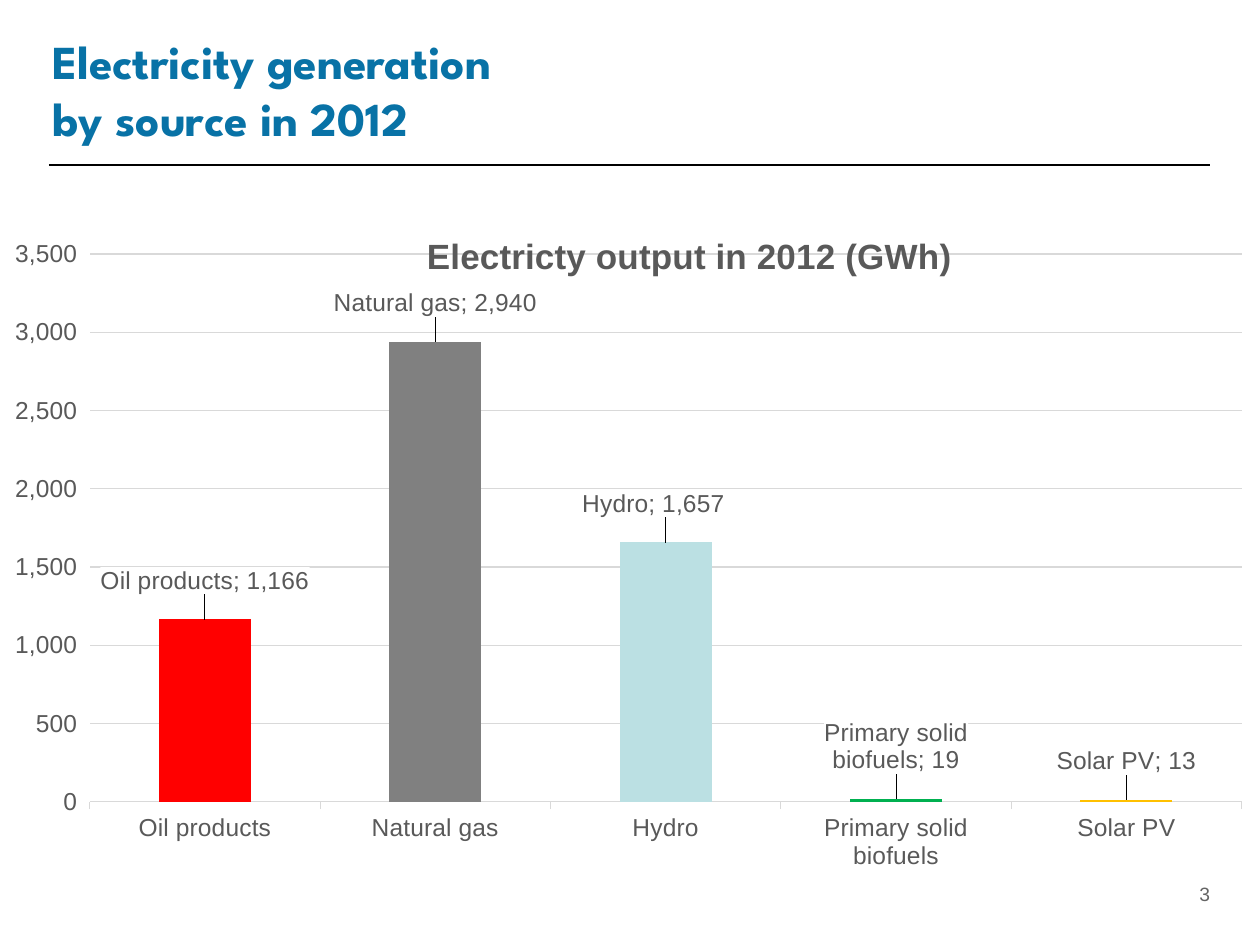
from pptx import Presentation
from pptx.chart.data import CategoryChartData
from pptx.dml.color import RGBColor
from pptx.enum.chart import XL_CHART_TYPE, XL_LABEL_POSITION, XL_TICK_MARK
from pptx.enum.shapes import MSO_CONNECTOR
from pptx.enum.text import MSO_ANCHOR, PP_ALIGN
from pptx.oxml import parse_xml
from pptx.oxml.ns import nsdecls, qn
from pptx.util import Pt

# Content
TITLE = "Electricity generation\vby source in 2012"
CHART = "Electricty output in 2012 (GWh)"
PAGE = "3"
# source, output in GWh, bar colour, label shift (share of chart size)
BARS = [
    ("Oil products", 1166, "FF0000", (0, -0.03)),
    ("Natural gas", 2940, "808080", (0, -0.03)),
    ("Hydro", 1657, "BBE0E3", (-0.01, -0.03)),
    ("Primary solid biofuels", 19, "00B050", (0, -0.03)),
    ("Solar PV", 13, "FFC000", (0, -0.03)),
]
THEME = {
    "head": ("League Spartan", 27, "0872A6", True),
    "page": ("Arial", 11, "646464", False),
    "chart": ("Arial", 20, "595959", True),
    "label": ("Arial", 14, "595959", False),
    "rule": "000000",
    "grid": "D9D9D9",
}


def style(font, key):
    name, size, color, bold = THEME[key]
    font.name, font.size, font.bold = name, Pt(size), bold
    font.color.rgb = RGBColor.from_string(color)


def stroke(line, key):
    line.width = Pt(0.75)
    line.color.rgb = RGBColor.from_string(THEME[key])


def add_text(slide, box, text, key, align, anchor):
    frame = slide.shapes.add_textbox(*map(Pt, box)).text_frame
    frame.word_wrap = True
    frame.margin_left = frame.margin_right = 0
    frame.margin_top = frame.margin_bottom = 0
    frame.vertical_anchor = anchor
    frame.text = text
    para = frame.paragraphs[0]
    para.alignment = align
    for run in para.runs:
        style(run.font, key)


def layout(x, y, w=None, h=None, edge=False):
    """Manual chart layout; edge places it from the chart's corner."""
    tags = [("layoutTarget", "inner")] if w else []
    if edge:
        tags += [("xMode", "edge"), ("yMode", "edge")]
    tags += [("x", x), ("y", y)]
    if w:
        tags += [("w", w), ("h", h)]
    body = "".join(f'<c:{tag} val="{val}"/>' for tag, val in tags)
    return parse_xml(f'<c:layout {nsdecls("c")}><c:manualLayout>{body}'
                     '</c:manualLayout></c:layout>')


def set_layout(node, new):
    for old in node.findall(qn("c:layout")):
        node.remove(old)
    return new


def add_chart(slide, box):
    data = CategoryChartData(number_format="#,##0")
    data.categories = [bar[0] for bar in BARS]
    data.add_series("Series 1", [bar[1] for bar in BARS])
    chart = slide.shapes.add_chart(
        XL_CHART_TYPE.COLUMN_CLUSTERED, *map(Pt, box), data).chart
    chart.has_legend = False
    style(chart.font, "label")

    # Chart title, laid over the plot
    frame = chart.chart_title.text_frame
    frame.text = CHART
    style(frame.paragraphs[0].runs[0].font, "chart")
    root = chart.element.find(qn("c:chart"))
    title = root.find(qn("c:title"))
    place = set_layout(title, layout(0.33, 0.02, edge=True))
    title.find(qn("c:tx")).addnext(place)
    title.find(qn("c:overlay")).set("val", "1")

    # Plot area
    area = root.find(qn("c:plotArea"))
    area.insert(0, set_layout(area, layout(0.06, 0.061, 0.94, 0.837, True)))

    # Axes
    cat, val = chart.category_axis, chart.value_axis
    for axis in (cat, val):
        style(axis.tick_labels.font, "label")
    cat.major_tick_mark = XL_TICK_MARK.OUTSIDE
    stroke(cat.format.line, "grid")
    val.major_tick_mark = XL_TICK_MARK.OUTSIDE
    val.minimum_scale, val.maximum_scale, val.major_unit = 0, 3500, 500
    val.tick_labels.number_format = "#,##0"
    val.tick_labels.number_format_is_linked = False
    val.format.line.fill.background()
    stroke(val.major_gridlines.format.line, "grid")

    # Bars and their labels
    plot = chart.plots[0]
    plot.gap_width, plot.vary_by_categories = 150, False
    series = plot.series[0]
    for i, (_, _, color, _) in enumerate(BARS):
        point = series.points[i]
        point.format.fill.solid()
        point.format.fill.fore_color.rgb = RGBColor.from_string(color)
        label = point.data_label
        style(label.font, "label")
        label.position = XL_LABEL_POSITION.OUTSIDE_END
    tags = chart.element.iter(qn("c:dLbl"))
    for tag, (_, _, _, shift) in zip(tags, BARS):
        tag.find(qn("c:idx")).addnext(set_layout(tag, layout(*shift)))
        for old in tag.findall(qn("c:spPr")):
            tag.remove(old)
        tag.find(qn("c:txPr")).addprevious(parse_xml(
            f'<c:spPr {nsdecls("c", "a")}><a:solidFill>'
            '<a:srgbClr val="FFFFFF"/></a:solidFill></c:spPr>'))
        tag.find(qn("c:showVal")).set("val", "1")
        tag.find(qn("c:showCatName")).set("val", "1")
        tag.find(qn("c:showBubbleSize")).addnext(parse_xml(
            f'<c:separator {nsdecls("c")}>; </c:separator>'))


def main():
    deck = Presentation()
    deck.slide_width, deck.slide_height = Pt(720), Pt(540)
    slide = deck.slides.add_slide(deck.slide_layouts[6])

    # Rule under the heading
    rule = slide.shapes.add_connector(
        MSO_CONNECTOR.STRAIGHT, Pt(28), Pt(94.3), Pt(691.2), Pt(94.3))
    stroke(rule.line, "rule")
    rule.element.spPr.append(parse_xml(f'<a:effectLst {nsdecls("a")}/>'))

    # Heading, page number and chart
    add_text(slide, (30, 31.7, 663, 38), TITLE, "head",
             PP_ALIGN.LEFT, MSO_ANCHOR.MIDDLE)
    add_text(slide, (635, 504, 56.5, 24.5), PAGE, "page",
             PP_ALIGN.RIGHT, MSO_ANCHOR.TOP)
    add_chart(slide, (8.6, 122.4, 701.3, 374.4))
    deck.save("out.pptx")


if __name__ == "__main__":
    main()
